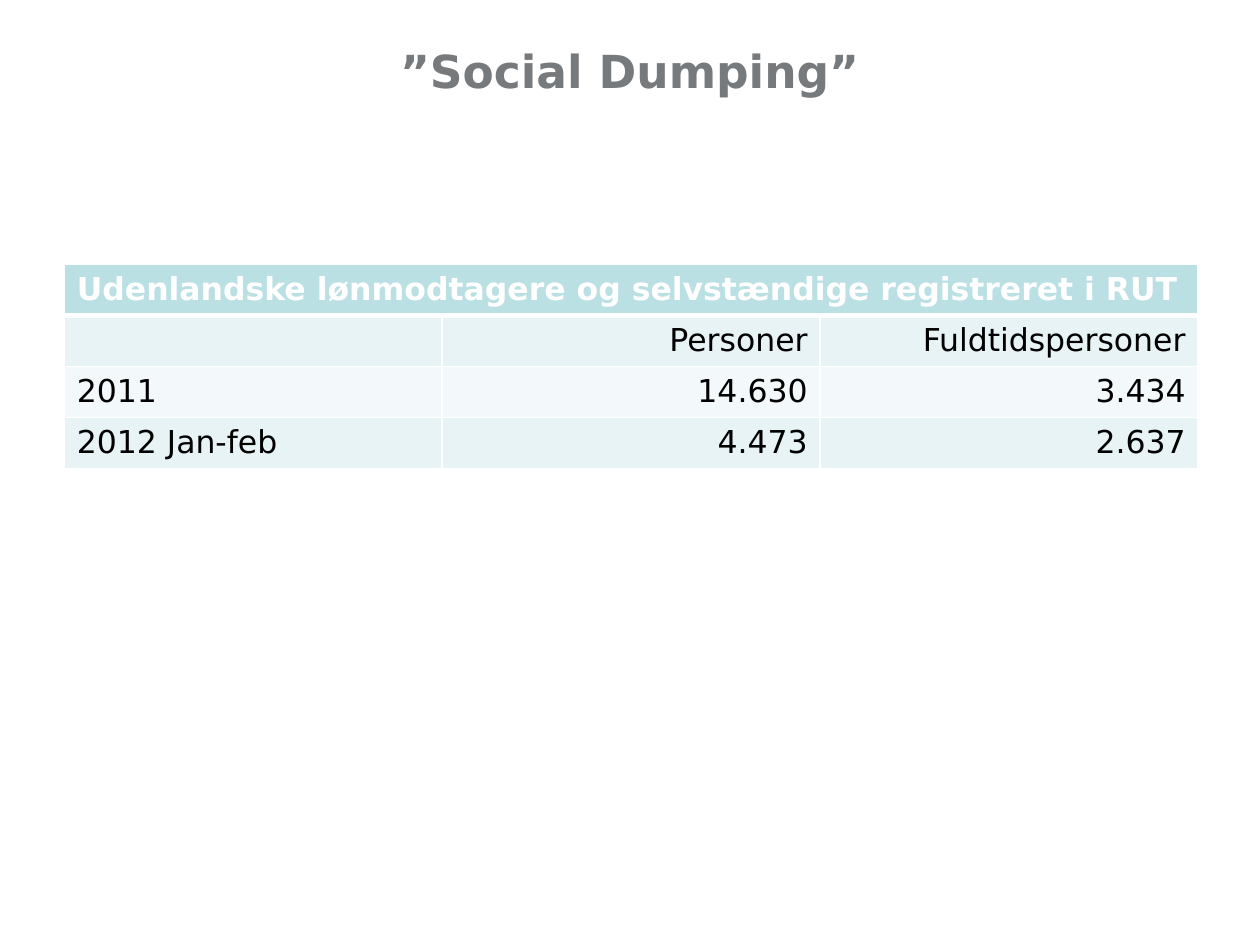
from lxml import etree
from pptx import Presentation
from pptx import util as u
from pptx.dml.color import RGBColor
from pptx.enum import text
from pptx.oxml.ns import qn

FONT = "DejaVu Sans"
WHITE = "FFFFFF"
HEADER_FILL = "BBE0E3"
BAND_FILLS = ("E7F3F4", "F3F9FA")
HEADING = "Udenlandske lønmodtagere og selvstændige registreret i RUT"
ROWS = [
    ("", "Personer", "Fuldtidspersoner"),
    ("2011", "14.630", "3.434"),
    ("2012 Jan-feb", "4.473", "2.637"),
]


def rgb(value):
    return RGBColor.from_string(value)


def format_paragraph(paragraph, size, color, bold, alignment):
    paragraph.alignment = alignment
    font = paragraph.font
    font.name, font.size, font.bold = FONT, u.Pt(size), bold
    font.color.rgb = rgb(color)


def add_title(slide, content):
    title = slide.shapes.title
    title.left, title.top = u.Inches(0.67), u.Inches(0.21)
    title.width, title.height = u.Inches(8.66), u.Inches(0.69)
    frame = title.text_frame
    frame.text = content
    frame.word_wrap = True
    frame.auto_size = text.MSO_AUTO_SIZE.NONE
    frame.vertical_anchor = text.MSO_ANCHOR.MIDDLE
    frame.margin_left = frame.margin_right = 0
    format_paragraph(frame.paragraphs[0], 26, "777A7C", True, text.PP_ALIGN.CENTER)


def set_borders(cell, top=1, bottom=1):
    properties = cell._tc.get_or_add_tcPr()
    for side, width in (("L", 1), ("R", 1), ("T", top), ("B", bottom)):
        line = etree.SubElement(properties, qn(f"a:ln{side}"), w=str(u.Pt(width)))
        fill = etree.SubElement(line, qn("a:solidFill"))
        etree.SubElement(fill, qn("a:srgbClr"), val=WHITE)


def format_cell(cell, content, fill, color="000000", bold=False,
                alignment=text.PP_ALIGN.LEFT):
    cell.text = content
    cell.fill.solid()
    cell.fill.fore_color.rgb = rgb(fill)
    format_paragraph(cell.text_frame.paragraphs[0], 18, color, bold, alignment)


def add_worker_table(slide):
    frame = slide.shapes.add_table(len(ROWS) + 1, 3, u.Inches(0.51), u.Inches(2.1),
                                   u.Inches(9), u.Inches(1.62))
    table = frame.table

    # Heading across all columns, with a thick rule below
    for cell in table.rows[0].cells:
        set_borders(cell, bottom=3)
    heading = table.cell(0, 0)
    heading.merge(table.cell(0, 2))
    format_cell(heading, HEADING, HEADER_FILL, WHITE, True)

    # Banded rows, figures to the right
    for row, values in enumerate(ROWS, start=1):
        for column, value in enumerate(values):
            cell = table.cell(row, column)
            set_borders(cell, top=3 if row == 1 else 1)
            alignment = text.PP_ALIGN.RIGHT if column else text.PP_ALIGN.LEFT
            format_cell(cell, value, BAND_FILLS[(row - 1) % 2], alignment=alignment)


def main():
    presentation = Presentation()
    presentation.slide_width, presentation.slide_height = u.Inches(10), u.Inches(7.5)
    slide = presentation.slides.add_slide(presentation.slide_layouts[5])
    add_title(slide, "”Social Dumping”")
    add_worker_table(slide)
    presentation.save("out.pptx")


if __name__ == "__main__":
    main()
